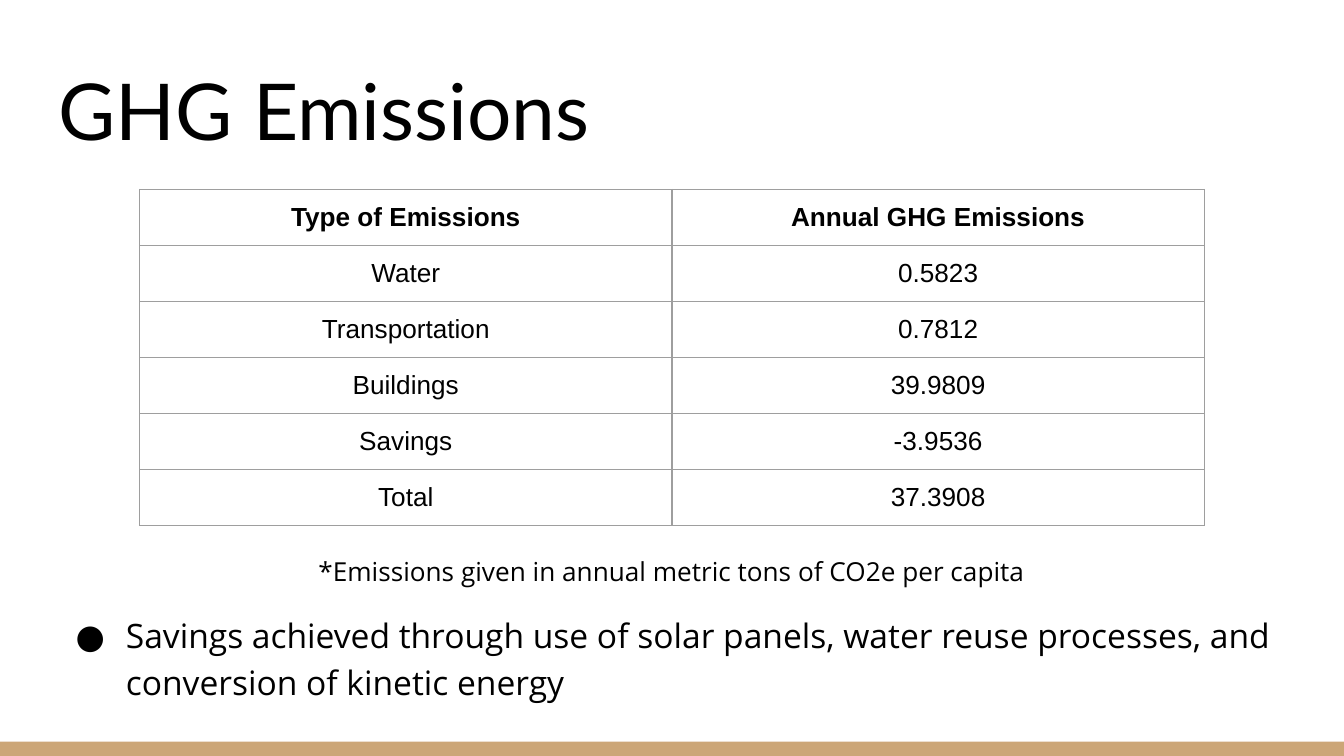
from lxml import etree
from pptx import Presentation
from pptx.dml.color import RGBColor
from pptx.enum import shapes, text
from pptx.oxml import ns
from pptx.util import Cm, Pt

BLACK = RGBColor(0x00, 0x00, 0x00)
TAN = RGBColor(0xCC, 0xA6, 0x77)
GREY = RGBColor(0x9E, 0x9E, 0x9E)
INSET = Cm(0.25)
EMISSIONS = [
    ("Type of Emissions", "Annual GHG Emissions"),
    ("Water", "0.5823"),
    ("Transportation", "0.7812"),
    ("Buildings", "39.9809"),
    ("Savings", "-3.9536"),
    ("Total", "37.3908"),
]


def set_font(paragraph, name, size, bold=False):
    font = paragraph.font
    font.name, font.size, font.bold = name, Pt(size), bold
    font.color.rgb = BLACK


def set_frame(frame, anchor):
    frame.word_wrap = True
    frame.auto_size = text.MSO_AUTO_SIZE.NONE
    frame.vertical_anchor = anchor
    frame.margin_left = frame.margin_right = INSET
    frame.margin_top = frame.margin_bottom = INSET


prs = Presentation()
prs.slide_width, prs.slide_height = Cm(25.4), Cm(14.29)
slide = prs.slides.add_slide(prs.slide_layouts[5])

footer_band = slide.shapes.add_shape(
    shapes.MSO_SHAPE.RECTANGLE, 0, Cm(14.02), prs.slide_width, Cm(0.27))
footer_band.shadow.inherit = False
footer_band.fill.solid()
footer_band.fill.fore_color.rgb = TAN
footer_band.line.fill.background()

heading = slide.shapes.title
heading.left, heading.top = Cm(0.86), Cm(0.89)
heading.width, heading.height = Cm(23.67), Cm(2.31)
heading.text_frame.text = "GHG Emissions"
set_frame(heading.text_frame, text.MSO_ANCHOR.BOTTOM)
heading.text_frame.paragraphs[0].alignment = text.PP_ALIGN.LEFT
set_font(heading.text_frame.paragraphs[0], "Lato", 42)

notes = slide.shapes.add_textbox(Cm(0.86), Cm(10.16), Cm(23.67), Cm(4.11)).text_frame
set_frame(notes, text.MSO_ANCHOR.TOP)
units = notes.paragraphs[0]
units.text = "*Emissions given in annual metric tons of CO2e per capita"
units.alignment = text.PP_ALIGN.CENTER
units.line_spacing = 1.15
set_font(units, "Open Sans", 14)

savings = notes.add_paragraph()
savings.text = ("Savings achieved through use of solar panels, water reuse processes, "
                "and conversion of kinetic energy")
savings.line_spacing = 1.15
savings.space_before = Pt(12)
bullet = savings._p.get_or_add_pPr()
bullet.set("marL", str(Cm(1.27)))
bullet.set("indent", str(Cm(-0.95)))
bullet_color = etree.SubElement(bullet, ns.qn("a:buClr"))
etree.SubElement(bullet_color, ns.qn("a:srgbClr"), val=str(BLACK))
etree.SubElement(bullet, ns.qn("a:buFont"), typeface="Open Sans")
etree.SubElement(bullet, ns.qn("a:buChar"), char="●")
set_font(savings, "Open Sans", 18)

emissions_table = slide.shapes.add_table(
    len(EMISSIONS), 2, Cm(2.64), Cm(3.58), Cm(20.12), Cm(1.06 * len(EMISSIONS))).table
for row, values in enumerate(EMISSIONS):
    for column, value in enumerate(values):
        cell = emissions_table.cell(row, column)
        cell.text = value
        cell.margin_left = cell.margin_right = INSET
        cell.margin_top = cell.margin_bottom = INSET
        cell.text_frame.paragraphs[0].alignment = text.PP_ALIGN.CENTER
        set_font(cell.text_frame.paragraphs[0], "Arial", 14, bold=row == 0)
        cell_format = cell._tc.get_or_add_tcPr()
        for side in ("lnL", "lnR", "lnT", "lnB"):
            border = etree.SubElement(cell_format, ns.qn(f"a:{side}"), w=str(Pt(0.75)))
            border_fill = etree.SubElement(border, ns.qn("a:solidFill"))
            etree.SubElement(border_fill, ns.qn("a:srgbClr"), val=str(GREY))
        cell.fill.background()

prs.save("out.pptx")
